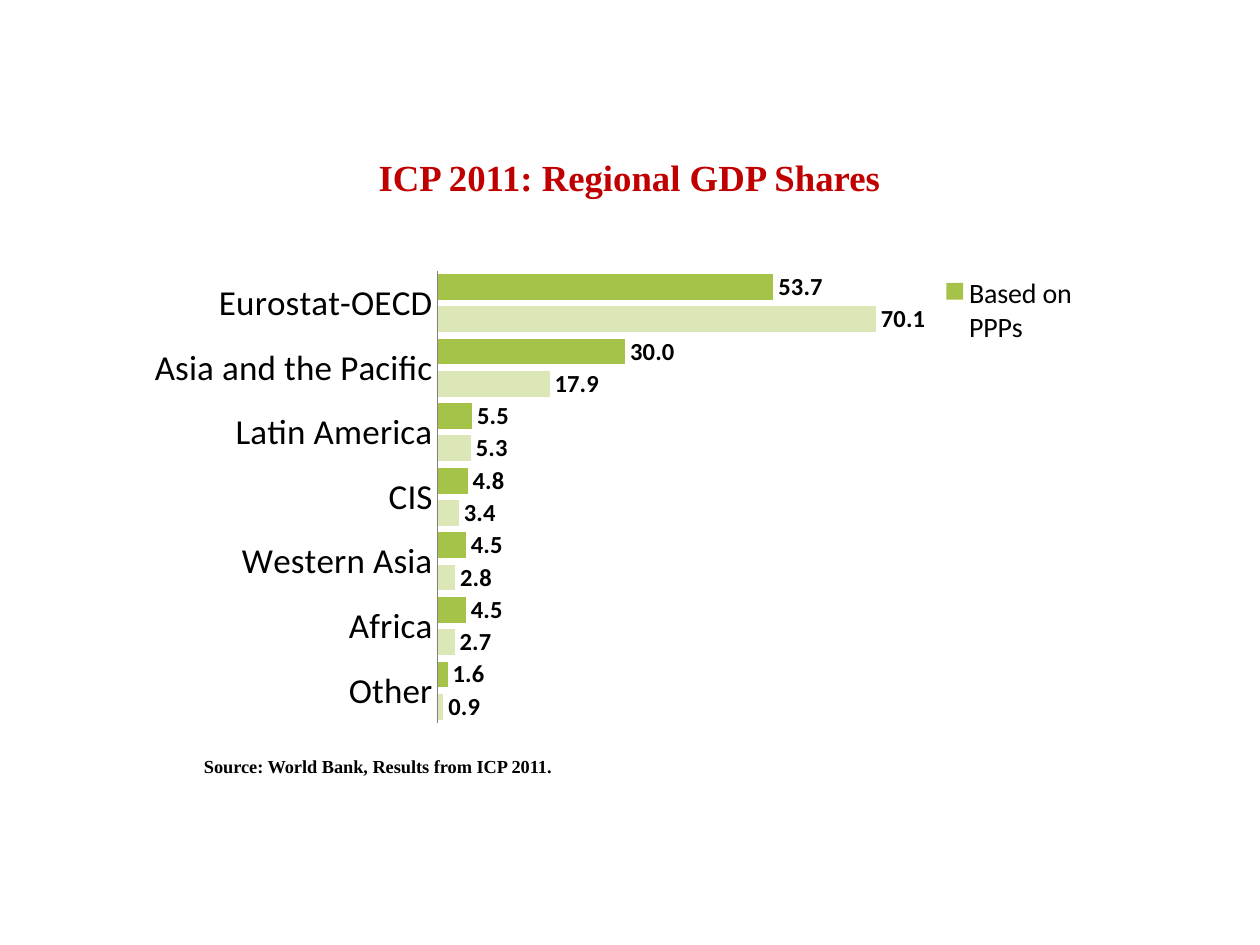
from lxml import etree
from pptx import Presentation
from pptx.chart.data import CategoryChartData
from pptx.dml.color import RGBColor
from pptx.enum.chart import (XL_CHART_TYPE, XL_LABEL_POSITION, XL_LEGEND_POSITION,
                             XL_TICK_LABEL_POSITION, XL_TICK_MARK)
from pptx.enum.text import MSO_ANCHOR, PP_ALIGN
from pptx.oxml.ns import qn
from pptx.util import Inches, Pt

BAR_CLUSTERED = XL_CHART_TYPE.BAR_CLUSTERED
OUTSIDE_END = XL_LABEL_POSITION.OUTSIDE_END
LEGEND_BOTTOM = XL_LEGEND_POSITION.BOTTOM
NO_LABELS = XL_TICK_LABEL_POSITION.NONE
NO_TICKS = XL_TICK_MARK.NONE

RED = RGBColor(0xC0, 0x00, 0x00)
BLACK = RGBColor(0x00, 0x00, 0x00)
GREY = RGBColor(0x80, 0x80, 0x80)
GREEN = RGBColor(0xA5, 0xC2, 0x49)
PALE_GREEN = RGBColor(0xDB, 0xE7, 0xB6)
SERIF, SANS = "Times New Roman", "Calibri"

TITLE = "ICP 2011: Regional GDP Shares"
SOURCE = "Source: World Bank, Results from ICP 2011."
REGIONS = ["Eurostat-OECD", "Asia and the Pacific", "Latin America", "CIS",
           "Western Asia", "Africa", "Other"]
SERIES = [
    ("Based on PPPs", [53.7, 30.0, 5.5, 4.8, 4.5, 4.5, 1.6], GREEN),
    ("Based on XRs", [70.1, 17.9, 5.3, 3.4, 2.8, 2.7, 0.9], PALE_GREEN),
]
PLOT_AREA = (0.33, 0.024, 0.521, 0.957)
LEGEND_AREA = (0.85, 0.01, 0.15, 0.2)


def style_font(font, name, size, color=BLACK, bold=False):
    font.name, font.size, font.bold = name, Pt(size), bold
    font.color.rgb = color


def add_text(shape, text, size, color):
    shape.text_frame.word_wrap = True
    paragraph = shape.text_frame.paragraphs[0]
    run = paragraph.add_run()
    run.text = text
    style_font(run.font, SERIF, size, color, bold=True)
    return paragraph


def manual_layout(area, inner=False):
    """Return a c:layout element; area is x, y, width, height as chart fractions."""
    layout = etree.Element(qn("c:layout"))
    manual = etree.SubElement(layout, qn("c:manualLayout"))
    settings = [("layoutTarget", "inner")] if inner else []
    settings += [("xMode", "edge"), ("yMode", "edge"), *zip("xywh", area)]
    for tag, value in settings:
        etree.SubElement(manual, qn(f"c:{tag}"), val=str(value))
    return layout


def add_share_chart(slide):
    data = CategoryChartData(number_format="#,##0.0")
    data.categories = REGIONS
    for name, values, _ in SERIES:
        data.add_series(name, values)
    chart = slide.shapes.add_chart(BAR_CLUSTERED, Inches(0.96), Inches(2.06),
                                   Inches(7.62), Inches(3.75), data).chart
    chart.has_title = False
    style_font(chart.font, SERIF, 10)

    plot = chart.plots[0]
    plot.gap_width, plot.overlap, plot.vary_by_categories = 25, -25, False
    for series, (_, _, color) in zip(plot.series, SERIES):
        series.format.fill.solid()
        series.format.fill.fore_color.rgb = color
        labels = series.data_labels
        labels.show_value = True
        labels.number_format, labels.number_format_is_linked = "#,##0.0", False
        labels.position = OUTSIDE_END
        style_font(labels.font, SANS, 14, bold=True)

    regions = chart.category_axis
    regions.reverse_order = True
    regions.major_tick_mark = NO_TICKS
    regions.format.line.color.rgb = GREY
    style_font(regions.tick_labels.font, SANS, 20)

    shares = chart.value_axis
    shares.minimum_scale, shares.maximum_scale = 0, 80
    shares.has_major_gridlines = False
    shares.tick_label_position = NO_LABELS
    shares.visible = False

    chart.has_legend = True
    legend = chart.legend
    legend.position = LEGEND_BOTTOM
    legend.include_in_layout = False
    style_font(legend.font, SANS, 16)
    place_plot_and_legend(chart)


def place_plot_and_legend(chart):
    """Set both areas by hand and hide the first series in the legend."""
    plot_area = chart.element.find(".//" + qn("c:plotArea"))
    legend = chart.element.find(".//" + qn("c:legend"))
    for parent in (plot_area, legend):
        for layout in parent.findall(qn("c:layout")):
            parent.remove(layout)
    plot_area.insert(0, manual_layout(PLOT_AREA, inner=True))
    entry = etree.Element(qn("c:legendEntry"))
    etree.SubElement(entry, qn("c:idx"), val="0")
    etree.SubElement(entry, qn("c:delete"), val="1")
    legend.insert(1, entry)
    legend.insert(2, manual_layout(LEGEND_AREA))


def main():
    presentation = Presentation()
    presentation.slide_width, presentation.slide_height = Inches(10), Inches(7.5)
    slide = presentation.slides.add_slide(presentation.slide_layouts[5])

    title = slide.shapes.title
    title.left, title.top = Inches(1.62), Inches(1.16)
    title.width, title.height = Inches(6.75), Inches(0.58)
    frame = title.text_frame
    frame.vertical_anchor = MSO_ANCHOR.TOP
    frame.margin_left = frame.margin_right = frame.margin_top = Inches(0.07)
    frame.margin_bottom = Inches(0.04)
    add_text(title, TITLE, 21, RED).alignment = PP_ALIGN.CENTER

    source = slide.shapes.add_textbox(Inches(1.52), Inches(5.94),
                                      Inches(5.55), Inches(0.28))
    add_text(source, SOURCE, 10.5, BLACK)

    add_share_chart(slide)
    presentation.save("out.pptx")


if __name__ == "__main__":
    main()
